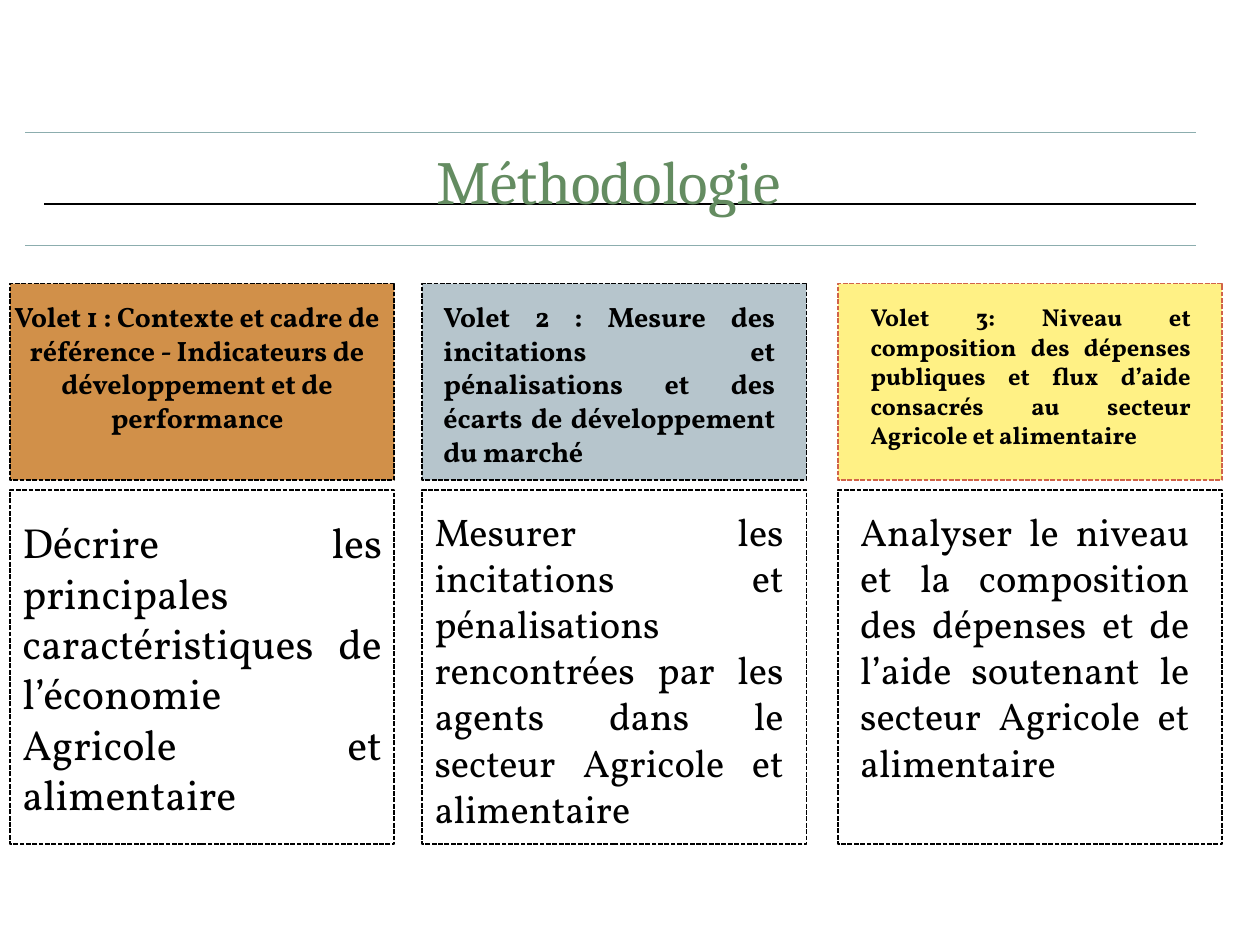
from dataclasses import dataclass
from typing import Any

from lxml import etree
from pptx import Presentation
from pptx.dml.color import RGBColor
from pptx.enum.dml import MSO_LINE
from pptx.enum.shapes import MSO_CONNECTOR, MSO_SHAPE
from pptx.enum.text import MSO_ANCHOR, MSO_AUTO_SIZE, PP_ALIGN
from pptx.oxml.ns import qn
from pptx.util import Cm, Pt

COLORS = {
    "black": "000000", "white": "FFFFFF", "title": "648C61", "rule": "8CADAE",
    "ochre": "D19049", "slate": "88A1AD", "yellow": "FFF185", "red": "D16349",
}


@dataclass
class SlideBuilder:
    slide: Any
    title_font: str = "Cambria"
    text_font: str = "Vollkorn"

    def color(self, name):
        return RGBColor.from_string(COLORS[name])

    def format_text(self, frame, text, font, size, color, align, bold=False):
        frame.text = text
        frame.word_wrap = True
        paragraph = frame.paragraphs[0]
        paragraph.alignment = align
        for run in paragraph.runs:
            run.font.name = font
            run.font.size = Pt(size)
            run.font.bold = bold
            run.font.color.rgb = self.color(color)

    def title(self, text, left, top, width, height):
        heading = self.slide.shapes.title
        heading.left, heading.top = Cm(left), Cm(top)
        heading.width, heading.height = Cm(width), Cm(height)
        frame = heading.text_frame
        self.format_text(frame, text, self.title_font, 35, "title", PP_ALIGN.CENTER)
        frame.vertical_anchor = MSO_ANCHOR.MIDDLE
        frame.margin_left = Cm(0.5)
        # Bring the title in front of the rules
        heading.element.getparent().append(heading.element)

    def rule(self, left, right, y, color):
        line = self.slide.shapes.add_connector(
            MSO_CONNECTOR.STRAIGHT, Cm(left), Cm(y), Cm(right), Cm(y))
        line.line.color.rgb = self.color(color)
        line.line.width = Pt(0.75)
        etree.SubElement(line.element.spPr, qn("a:effectLst"))

    def group(self):
        return self.slide.shapes.add_group_shape()

    def panel(self, group, left, top, width, height, fill, border="black", opacity=100):
        box = group.shapes.add_shape(
            MSO_SHAPE.RECTANGLE, Cm(left), Cm(top), Cm(width), Cm(height))
        box.shadow.inherit = False
        box.fill.solid()
        box.fill.fore_color.rgb = self.color(fill)
        if opacity < 100:
            rgb = box.element.spPr.find(".//" + qn("a:srgbClr"))
            etree.SubElement(rgb, qn("a:alpha"), val=str(opacity * 1000))
        box.line.color.rgb = self.color(border)
        box.line.width = Pt(0.9)
        box.line.dash_style = MSO_LINE.SQUARE_DOT

    def text(self, group, area, text, size, align=PP_ALIGN.JUSTIFY, bold=False):
        box = group.shapes.add_textbox(*(Cm(length) for length in area))
        self.format_text(box.text_frame, text, self.text_font, size, "black", align, bold)
        box.text_frame.auto_size = MSO_AUTO_SIZE.SHAPE_TO_FIT_TEXT


# Text areas are left, top, width, height in centimetres
VOLETS = [
    dict(left=0.2, fill="ochre", border="black", opacity=100,
         heading="Volet 1 : Contexte et cadre de référence - Indicateurs de "
                 "développement et de performance",
         heading_area=(0, 5.92, 7.95, 3), heading_size=16, align=PP_ALIGN.CENTER,
         goal="Décrire les principales caractéristiques de l’économie "
              "Agricole et alimentaire",
         goal_area=(0.2, 10.29, 7.75, 5.38), goal_size=24),
    dict(left=8.51, fill="slate", border="black", opacity=61,
         heading="Volet 2 : Mesure des incitations et pénalisations et des "
                 "écarts de développement du marché",
         heading_area=(8.69, 5.92, 7.19, 3.68), heading_size=16, align=PP_ALIGN.JUSTIFY,
         goal="Mesurer les incitations et pénalisations rencontrées par les "
              "agents dans le secteur Agricole et alimentaire",
         goal_area=(8.51, 10.11, 7.54, 6.83), goal_size=22),
    dict(left=16.89, fill="yellow", border="red", opacity=100,
         heading="Volet 3: Niveau et composition des dépenses publiques et flux "
                 "d’aide consacrés au secteur Agricole et alimentaire",
         heading_area=(17.3, 5.97, 6.96, 3.84), heading_size=14, align=PP_ALIGN.JUSTIFY,
         goal="Analyser le niveau et la composition des dépenses et de l’aide "
              "soutenant le secteur Agricole et alimentaire",
         goal_area=(17.09, 10.11, 7.14, 5.89), goal_size=22),
]
PANEL_WIDTH = 7.75


def main():
    presentation = Presentation()
    presentation.slide_width, presentation.slide_height = Cm(25.4), Cm(19.05)
    builder = SlideBuilder(presentation.slides.add_slide(presentation.slide_layouts[5]))

    # Title band
    for y in (4.95, 2.67):
        builder.rule(0.51, 24.1, y, "rule")
    builder.rule(0.89, 24.1, 4.11, "black")

    # One column per volet: coloured heading above its goal
    for volet in VOLETS:
        column = builder.group()
        builder.panel(column, volet["left"], 5.72, PANEL_WIDTH, 3.96,
                      volet["fill"], volet["border"], volet["opacity"])
        builder.text(column, volet["heading_area"], volet["heading"],
                     volet["heading_size"], volet["align"], bold=True)
        builder.panel(column, volet["left"], 9.88, PANEL_WIDTH, 7.14, "white")
        builder.text(column, volet["goal_area"], volet["goal"], volet["goal_size"])

    builder.title("Méthodologie", 0.71, 2.67, 22.86, 1.9)
    presentation.save("out.pptx")


if __name__ == "__main__":
    main()
